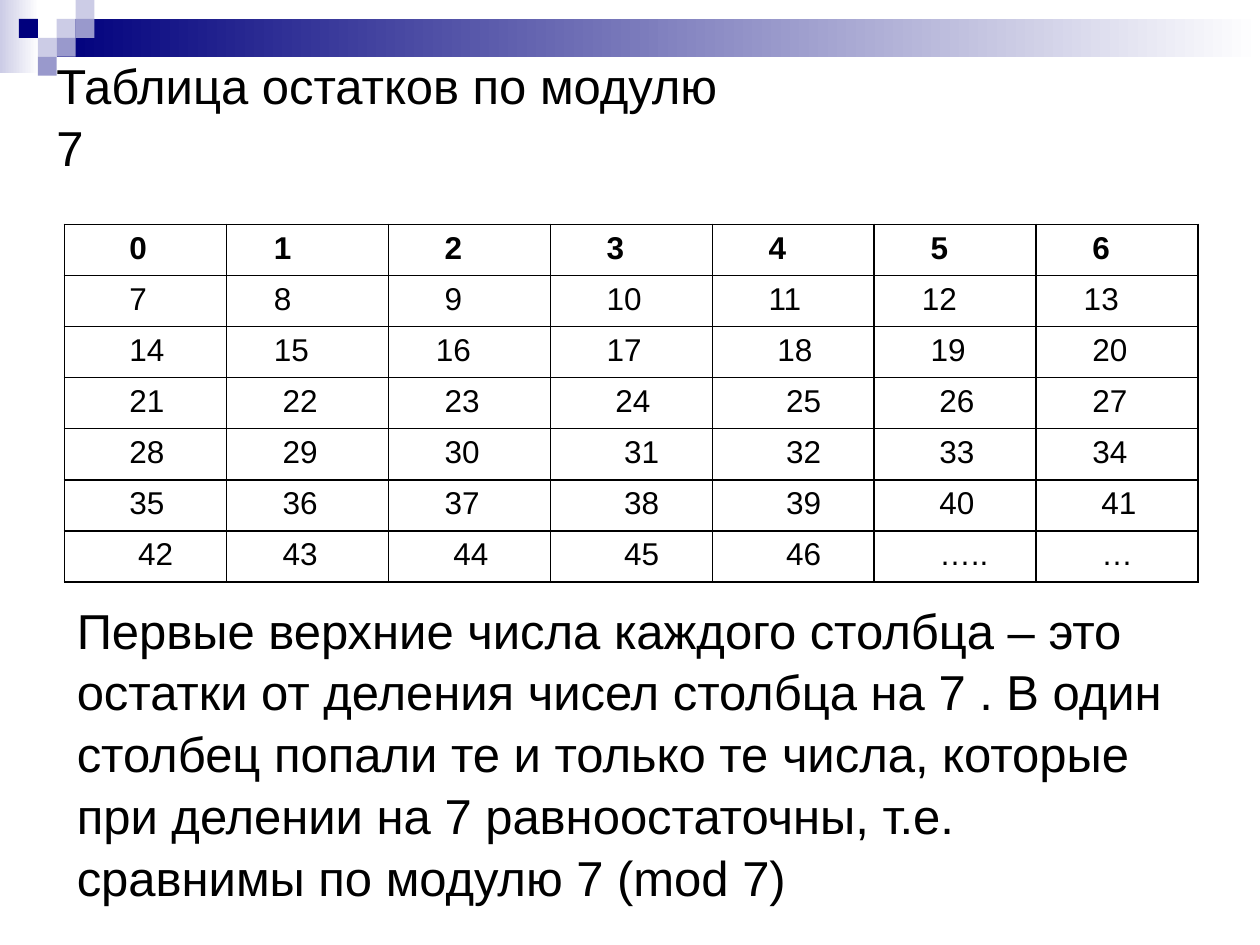
import pptx
import pptx.dml.color
import pptx.enum.shapes
import pptx.enum.text
import pptx.oxml
import pptx.oxml.ns
import pptx.util

Pt = pptx.util.Pt
BLACK, WHITE, NAVY, LILAC, VIOLET = "000000", "FFFFFF", "00007D", "CCCCE6", "9999CC"


def color(hex_string):
    return pptx.dml.color.RGBColor.from_string(hex_string)


def write(text_frame, text, size=28, bold=False, spacing=1.0):
    text_frame.text = text
    text_frame.word_wrap = True
    paragraph = text_frame.paragraphs[0]
    paragraph.line_spacing = spacing
    for run in paragraph.runs:
        run.font.name = "Arial"
        run.font.size = Pt(size)
        run.font.bold = bold
        run.font.color.rgb = color(BLACK)


presentation = pptx.Presentation()
presentation.slide_width = Pt(720)
presentation.slide_height = Pt(540)
slide = presentation.slides.add_slide(presentation.slide_layouts[6])

# Header: two gradient bars, then a staircase of small squares
step = 10.8
header = [
    (0, 0, 22.3, 41.8, [LILAC, WHITE]),
    (32.4, step, 687.6, 21.6, [NAVY, WHITE]),
]
squares = [(3, 1, LILAC), (4, 0, LILAC), (4, 1, VIOLET), (2, 2, LILAC),
           (1, 1, NAVY), (3, 2, VIOLET), (2, 3, VIOLET)]
header += [(column * step, row * step, step, step, [fill])
           for column, row, fill in squares]
for left, top, width, height, fills in header:
    shape = slide.shapes.add_shape(
        pptx.enum.shapes.MSO_SHAPE.RECTANGLE, Pt(left), Pt(top), Pt(width), Pt(height))
    shape.shadow.inherit = False
    shape.line.fill.background()
    if len(fills) == 1:
        shape.fill.solid()
        shape.fill.fore_color.rgb = color(fills[0])
    else:
        shape.fill.gradient()
        shape.fill.gradient_angle = 0
        for stop, position, fill in zip(shape.fill.gradient_stops, (0, 1), fills):
            stop.position = position
            stop.color.rgb = color(fill)

# Title
title = slide.shapes.add_textbox(Pt(25.2), Pt(31.7), Pt(648), Pt(67.7))
write(title.text_frame, "Таблица остатков по модулю\v7", spacing=1.05)
title.text_frame.vertical_anchor = pptx.enum.text.MSO_ANCHOR.MIDDLE

# Table of numbers by remainder; each digit below is a cell's indent in 5 pt units
indents = ["6455555", "6455544", "6445655", "6556765", "6557765", "6557766", "7567766"]
modulus = 7
table_frame = slide.shapes.add_table(
    modulus, modulus, Pt(36.8), Pt(128.2), Pt(648), Pt(204.4))
table = table_frame.table
for column in table.columns:
    column.width = Pt(648 / modulus)
for row_index, row_indents in enumerate(indents):
    table.rows[row_index].height = Pt(29.2)
    for column_index, indent in enumerate(row_indents):
        number = row_index * modulus + column_index
        text = {47: "…..", 48: "…"}.get(number, str(number))
        cell = table.cell(row_index, column_index)
        write(cell.text_frame, text, size=18, bold=row_index == 0)
        cell.margin_left = Pt(7.2 + 5 * int(indent))
        for side in ("lnL", "lnR", "lnT", "lnB"):
            cell._tc.get_or_add_tcPr().append(pptx.oxml.parse_xml(
                f'<a:{side} {pptx.oxml.ns.nsdecls("a")} w="12700"><a:solidFill>'
                f'<a:srgbClr val="{BLACK}"/></a:solidFill></a:{side}>'))
        cell.fill.background()

# Explanation
explanation = slide.shapes.add_textbox(Pt(36.8), Pt(337.7), Pt(646.6), Pt(177))
write(explanation.text_frame,
      "Первые верхние числа каждого столбца – это остатки от деления чисел столбца на 7 . "
      "В один столбец попали те и только те числа, которые при делении на 7 "
      "равноостаточны, т.е. сравнимы по модулю 7 (mod 7)", spacing=1.05)

presentation.save("out.pptx")
